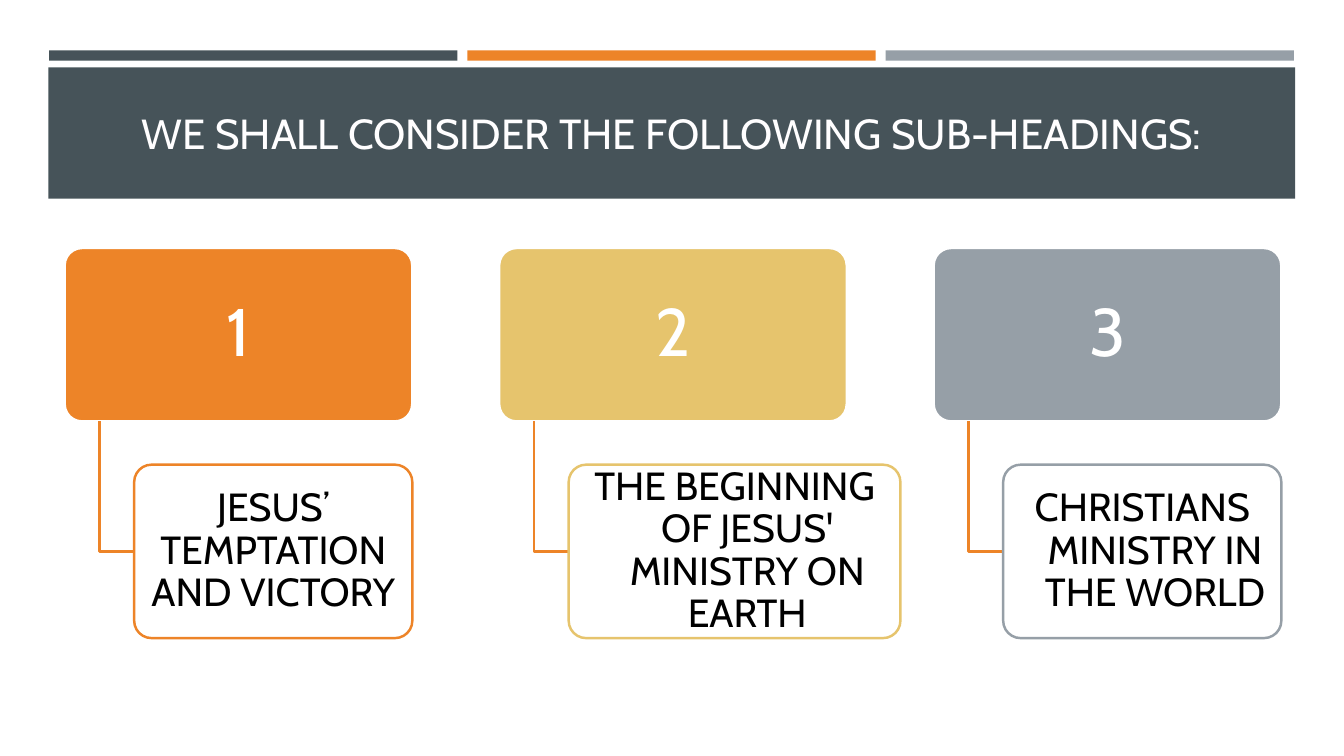
from dataclasses import dataclass

from lxml.etree import SubElement
from pptx import Presentation
from pptx.dml.color import RGBColor as RGB
from pptx.enum.shapes import MSO_SHAPE as Preset
from pptx.enum.text import MSO_ANCHOR as Anchor, PP_ALIGN as Align
from pptx.oxml.ns import qn
from pptx.util import Cm, Pt

TITLE = "WE SHALL CONSIDER THE FOLLOWING SUB-HEADINGS:"
TOPICS = [
    {"number": "1", "text": "JESUS’ TEMPTATION AND VICTORY", "width": 7.01, "hanging": 0},
    {"number": "2", "text": "THE BEGINNING OF JESUS' MINISTRY ON EARTH", "width": 8.36, "hanging": 0.64},
    {"number": "3", "text": "CHRISTIANS MINISTRY IN THE WORLD", "width": 7.01, "hanging": 0.64},
]


@dataclass(frozen=True)
class Theme:
    font: str = "Cabin"
    slate: str = "465359"
    orange: str = "ED8428"
    gold: str = "E6C46D"
    gray: str = "969FA7"
    white: str = "FFFFFF"
    title_color: str = "FFFEFF"
    black: str = "000000"
    title_size: int = 30
    number_size: int = 48
    topic_size: int = 28
    line_width: float = 1.75


THEME = Theme()
BAR_COLORS = [THEME.slate, THEME.orange, THEME.gray]
CARD_COLORS = [THEME.orange, THEME.gold, THEME.gray]

BAR_LEFT, BAR_TOP, BAR_WIDTH, BAR_HEIGHT, BAR_GAP = 1.24, 1.27, 10.29, 0.26, 0.25
BANNER = (1.22, 1.7, 31.42, 3.31)
CARD_LEFT, CARD_TOP, CARD_WIDTH, CARD_HEIGHT, CARD_GAP = 1.63, 6.25, 8.76, 4.37, 2.19
TOPIC_TOP = 11.71
INDENT = CARD_WIDTH / 10


def outline(shape, color):
    shape.line.color.rgb = RGB.from_string(color)
    shape.line.width = Pt(THEME.line_width)


def add_box(slide, box, preset=Preset.RECTANGLE, fill=THEME.white, line=None, opacity=100):
    shape = slide.shapes.add_shape(preset, *map(Cm, box))
    shape.shadow.inherit = False
    shape.fill.solid()
    shape.fill.fore_color.rgb = RGB.from_string(fill)
    if opacity < 100:
        color = shape.element.spPr.find(qn("a:solidFill"))[0]
        SubElement(color, qn("a:alpha")).set("val", str(opacity * 1000))
    if line:
        outline(shape, line)
    else:
        shape.line.fill.background()
    if preset == Preset.ROUNDED_RECTANGLE:
        shape.adjustments[0] = 0.1
    return shape


def write(shape, text, size, color, inset=(0.25, 0.13), spacing=1.0, hanging=0):
    frame = shape.text_frame
    frame.word_wrap = True
    frame.vertical_anchor = Anchor.MIDDLE
    frame.margin_left = frame.margin_right = Cm(inset[0])
    frame.margin_top = frame.margin_bottom = Cm(inset[1])
    paragraph = frame.paragraphs[0]
    paragraph.alignment = Align.CENTER
    paragraph.line_spacing = spacing
    if hanging:
        properties = paragraph._p.get_or_add_pPr()
        properties.set("marL", str(Cm(hanging)))
        properties.set("indent", str(-Cm(hanging)))
    run = paragraph.add_run()
    run.text = text
    run.font.name = THEME.font
    run.font.size = Pt(size)
    run.font.color.rgb = RGB.from_string(color)


def add_elbow(slide, left, top, right, bottom):
    builder = slide.shapes.build_freeform(Cm(left), Cm(top))
    corners = [(Cm(left), Cm(bottom)), (Cm(right), Cm(bottom))]
    builder.add_line_segments(corners, close=False)
    elbow = builder.convert_to_shape()
    elbow.shadow.inherit = False
    elbow.fill.background()
    outline(elbow, THEME.orange)


def add_topic(slide, left, topic, color):
    rounded = Preset.ROUNDED_RECTANGLE
    card = add_box(slide, (left, CARD_TOP, CARD_WIDTH, CARD_HEIGHT), rounded, color, THEME.white)
    write(card, topic["number"], THEME.number_size, THEME.white, inset=(0.25, 0.17), spacing=0.9)
    topic_left = left + 2 * INDENT
    add_elbow(slide, left + INDENT, CARD_TOP + CARD_HEIGHT, topic_left, TOPIC_TOP + CARD_HEIGHT / 2)
    detail = add_box(slide, (topic_left, TOPIC_TOP, topic["width"], CARD_HEIGHT), rounded,
                     line=color, opacity=90)
    write(detail, topic["text"], THEME.topic_size, THEME.black, inset=(0.15, 0.1),
          spacing=0.9, hanging=topic["hanging"])


def main():
    presentation = Presentation()
    presentation.slide_width, presentation.slide_height = Cm(33.87), Cm(19.05)
    slide = presentation.slides.add_slide(presentation.slide_layouts[6])
    for index, color in enumerate(BAR_COLORS):
        left = BAR_LEFT + index * (BAR_WIDTH + BAR_GAP)
        add_box(slide, (left, BAR_TOP, BAR_WIDTH, BAR_HEIGHT), fill=color)
    banner = add_box(slide, BANNER, fill=THEME.slate)
    write(banner, TITLE, THEME.title_size, THEME.title_color)
    for index, (topic, color) in enumerate(zip(TOPICS, CARD_COLORS)):
        add_topic(slide, CARD_LEFT + index * (CARD_WIDTH + CARD_GAP), topic, color)
    presentation.save("out.pptx")


if __name__ == "__main__":
    main()
